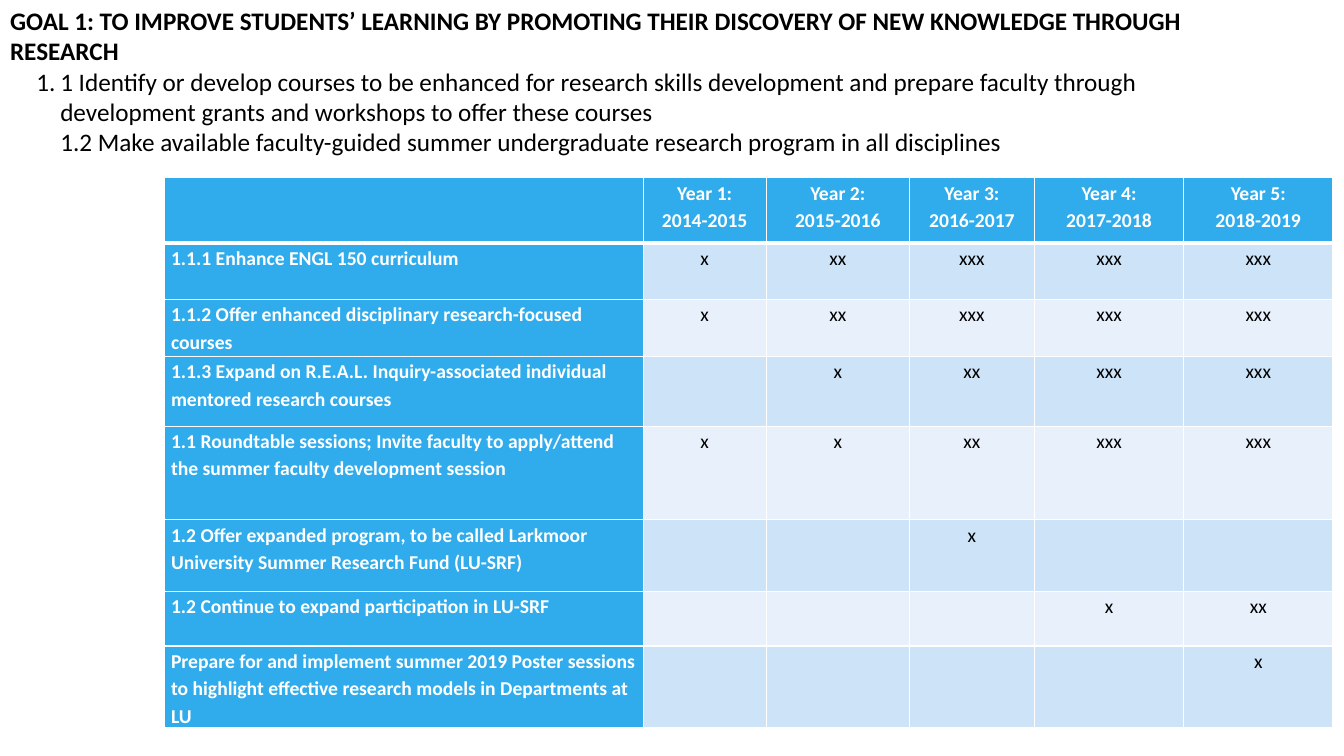
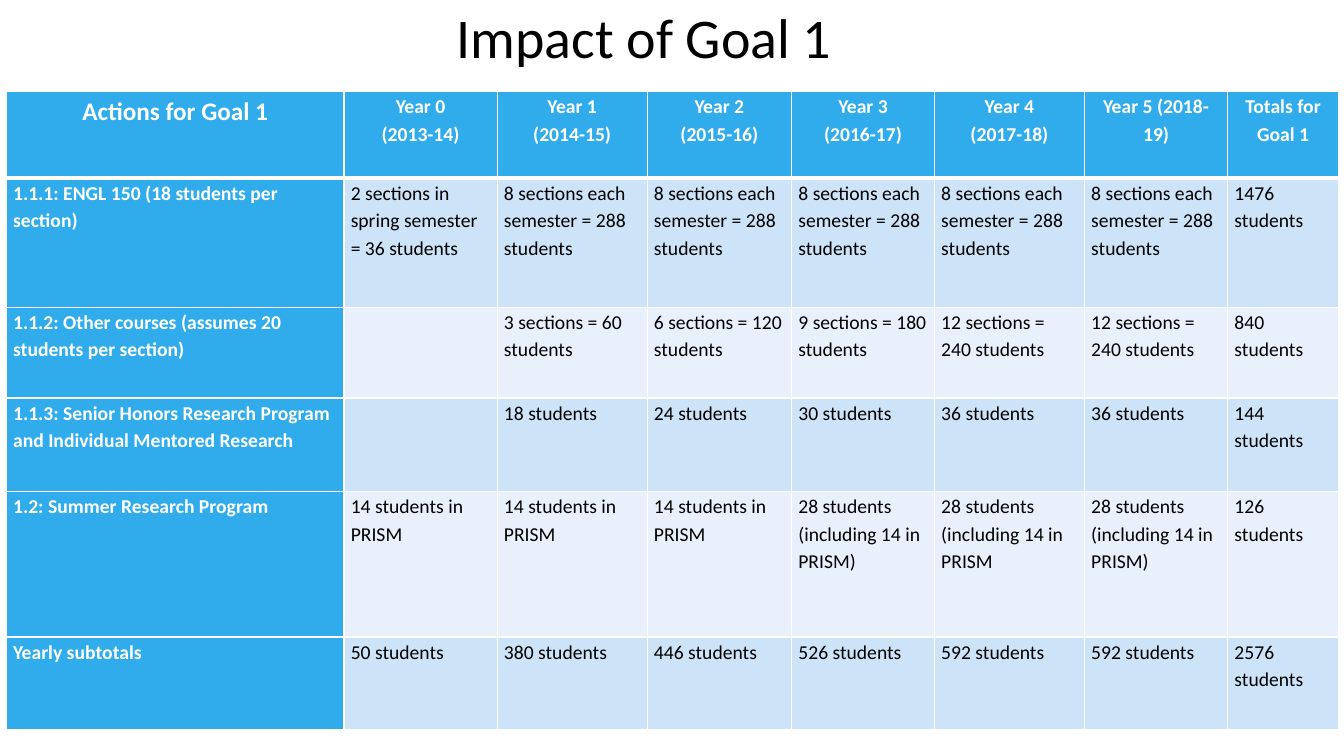
from lxml.etree import SubElement
from pptx import Presentation
from pptx.dml.color import RGBColor
from pptx.enum.text import MSO_ANCHOR, MSO_AUTO_SIZE, PP_ALIGN
from pptx.oxml.ns import qn
from pptx.util import Cm, Pt

FONT = "Calibri"
BLACK = RGBColor(0x00, 0x00, 0x00)
WHITE = RGBColor(0xFF, 0xFF, 0xFF)
BLUE = RGBColor(0x30, 0xAC, 0xEC)
BAND_DARK = RGBColor(0xCD, 0xE3, 0xF8)
BAND_LIGHT = RGBColor(0xE8, 0xF1, 0xFB)

GOAL = ("GOAL 1: TO IMPROVE STUDENTS’ LEARNING BY PROMOTING THEIR DISCOVERY "
        "OF NEW KNOWLEDGE THROUGH RESEARCH")
OBJECTIVES = (
    "1 Identify or develop courses to be enhanced for research skills development and "
    "prepare faculty through development grants and workshops to offer these courses\n"
    "1.2 Make available faculty-guided summer undergraduate research program in all disciplines"
)
TIMELINE = [
    ["", *(f"Year {n}:\n{2013 + n}-{2014 + n}" for n in range(1, 6))],
    ["1.1.1 Enhance ENGL 150 curriculum", "x", "xx", "xxx", "xxx", "xxx"],
    ["1.1.2 Offer enhanced disciplinary research-focused courses",
     "x", "xx", "xxx", "xxx", "xxx"],
    ["1.1.3 Expand on R.E.A.L. Inquiry-associated individual mentored research courses",
     "", "x", "xx", "xxx", "xxx"],
    ["1.1 Roundtable sessions; Invite faculty to apply/attend the summer faculty "
     "development session", "x", "x", "xx", "xxx", "xxx"],
    ["1.2 Offer expanded program, to be called Larkmoor University Summer Research Fund "
     "(LU-SRF)", "", "", "x", "", ""],
    ["1.2 Continue to expand participation in LU-SRF", "", "", "", "x", "xx"],
    ["Prepare for and implement summer 2019 Poster sessions to highlight effective "
     "research models in Departments at LU", "", "", "", "", "x"],
]
TIMELINE_COLUMNS = [12.07, 3.1, 3.61, 3.15, 3.76, 3.76]
TIMELINE_ROWS = [1.65, 1.42, 1.44, 1.75, 2.36, 1.8, 1.38, 2.06]

EIGHT_SECTIONS = "8 sections each semester = 288 students"
PRISM = "14 students in PRISM"
EXPANDED = "28 students (including 14 in PRISM)"
IMPACT = [
    ["Actions for Goal 1", *(f"Year {n}\n({2013 + n}-{14 + n})" for n in range(5)),
     "Year 5 (2018-19)", "Totals for Goal 1"],
    ["1.1.1: ENGL 150 (18 students per section)",
     "2 sections in spring semester = 36 students", *[EIGHT_SECTIONS] * 5, "1476 students"],
    ["1.1.2: Other courses (assumes 20 students per section)", "",
     "3 sections = 60 students", "6 sections = 120 students", "9 sections = 180 students",
     "12 sections = 240 students", "12 sections = 240 students", "840 students"],
    ["1.1.3: Senior Honors Research Program and Individual Mentored Research", "",
     *(f"{count} students" for count in (18, 24, 30, 36, 36, 144))],
    ["1.2: Summer Research Program", PRISM, PRISM, PRISM,
     EXPANDED, "28 students (including 14 in PRISM", EXPANDED, "126 students"],
    ["Yearly subtotals",
     *(f"{count} students" for count in (50, 380, 446, 526, 592, 592, 2576))],
]
IMPACT_COLUMNS = [8.51, 3.86, 3.78, 3.64, 3.6, 3.78, 3.61, 2.79]
IMPACT_ROWS = [2.18, 3.25, 2.29, 2.36, 3.66, 2.34]


def put_text(frame, text, size=14, color=BLACK, bold=False, align=PP_ALIGN.LEFT, spacing=1.0):
    frame.word_wrap = True
    for index, line in enumerate(text.split("\n")):
        paragraph = frame.add_paragraph() if index else frame.paragraphs[0]
        paragraph.alignment = align
        paragraph.line_spacing = spacing
        run = paragraph.add_run()
        run.text = line
        run.font.name = FONT
        run.font.size = Pt(size)
        run.font.bold = bold
        run.font.color.rgb = color


def place(shape, box):
    shape.left, shape.top, shape.width, shape.height = (Cm(length) for length in box)


def add_heading(slide, box, text, anchor=MSO_ANCHOR.MIDDLE, **text_format):
    heading = slide.shapes.title
    place(heading, box)
    heading.text_frame.auto_size = MSO_AUTO_SIZE.NONE
    heading.text_frame.vertical_anchor = anchor
    put_text(heading.text_frame, text, **text_format)


def add_objectives(slide, box, text):
    objectives = slide.shapes.add_textbox(*(Cm(length) for length in box))
    frame = objectives.text_frame
    frame.margin_top = frame.margin_bottom = 0
    put_text(frame, text, size=18)
    for paragraph in frame.paragraphs:
        paragraph._p.get_or_add_pPr().set("marL", str(Cm(1.27)))
    numbered = frame.paragraphs[0]._p.get_or_add_pPr()
    numbered.set("indent", str(Cm(-0.6)))
    SubElement(numbered, qn("a:buFont"), typeface=FONT)
    SubElement(numbered, qn("a:buAutoNum"), type="arabicPeriod")


def draw_borders(cell, widths):
    properties = cell._tc.get_or_add_tcPr()
    for index, (side, width) in enumerate(widths.items()):
        border = SubElement(properties, qn(f"a:ln{side}"), w=str(Pt(width)))
        fill = SubElement(border, qn("a:solidFill"))
        SubElement(fill, qn("a:srgbClr"), val=str(WHITE))
        properties.insert(index, border)


def cell_fill(row, column):
    if row == 0 or column == 0:
        return BLUE
    return BAND_DARK if row % 2 else BAND_LIGHT


def add_grid(slide, box, rows, column_widths, row_heights, body_align, corner_size=14):
    left, top = box
    table = slide.shapes.add_table(
        len(rows), len(column_widths), Cm(left), Cm(top),
        Cm(sum(column_widths)), Cm(sum(row_heights))).table
    table.first_col = True
    table.horz_banding = False
    for column, width in zip(table.columns, column_widths):
        column.width = Cm(width)
    for row, height in zip(table.rows, row_heights):
        row.height = Cm(height)
    for r, row in enumerate(rows):
        for c, text in enumerate(row):
            cell = table.cell(r, c)
            cell.margin_left = cell.margin_right = Cm(0.17)
            cell.margin_top = cell.margin_bottom = 0
            cell.fill.solid()
            cell.fill.fore_color.rgb = cell_fill(r, c)
            sides = {"L": 1, "R": 1, "T": 3 if r == 1 else 1, "B": 1 if r else 3}
            draw_borders(cell, sides)
            if not text:
                continue
            labelled = r == 0 or c == 0
            align = PP_ALIGN.CENTER if r == 0 else PP_ALIGN.LEFT if c == 0 else body_align
            put_text(cell.text_frame, text, size=14 if r or c else corner_size,
                     color=WHITE if labelled else BLACK, bold=labelled,
                     align=align, spacing=1.15)


def build_timeline(slide):
    add_heading(slide, (0, 0, 32.46, 1.68), GOAL, anchor=MSO_ANCHOR.TOP, size=18, bold=True)
    add_objectives(slide, (0, 1.66, 31.2, 2.33), OBJECTIVES)
    add_grid(slide, (4.14, 4.48), TIMELINE, TIMELINE_COLUMNS, TIMELINE_ROWS, PP_ALIGN.CENTER)


def build_impact(slide):
    add_heading(slide, (0, 0, 32.46, 1.8), "Impact of Goal 1", size=40, align=PP_ALIGN.CENTER)
    add_grid(slide, (0.16, 2.31), IMPACT, IMPACT_COLUMNS, IMPACT_ROWS, PP_ALIGN.LEFT,
             corner_size=18)


def main():
    deck = Presentation()
    deck.slide_width = Cm(33.87)
    deck.slide_height = Cm(19.05)
    title_only = deck.slide_layouts[5]
    for build in (build_timeline, build_impact):
        build(deck.slides.add_slide(title_only))
    deck.save("out.pptx")


if __name__ == "__main__":
    main()
